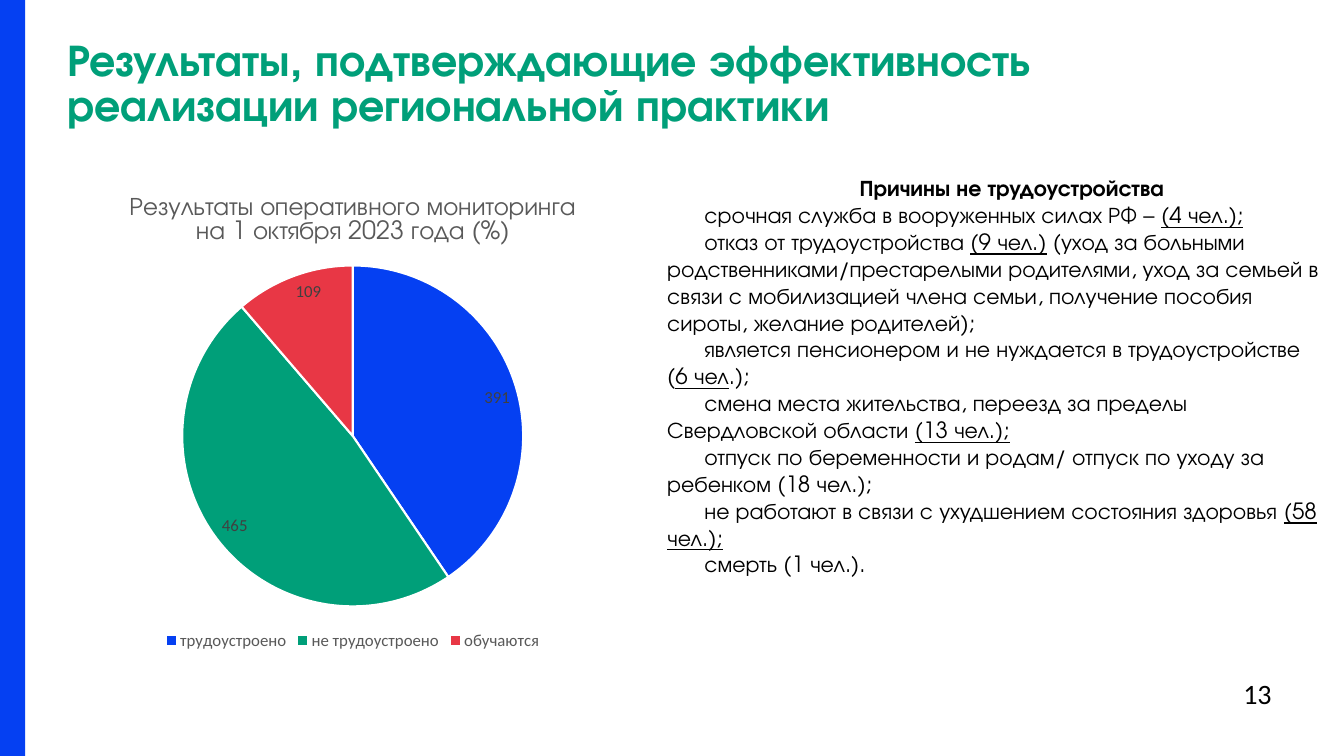
import pptx
import pptx.chart.data
import pptx.dml.color
import pptx.enum.chart
import pptx.enum.shapes
import pptx.enum.text
import pptx.oxml
import pptx.util

Pt = pptx.util.Pt

HEADING_FONT, PLAIN_FONT = "TeX Gyre Adventor", "Calibri"
TITLE = "Результаты, подтверждающие эффективность реализации региональной практики"
PAGE_NUMBER = "13"
CHART_TITLE = "Результаты оперативного мониторинга на 1 октября 2023 года (%)"
OUTCOMES = [
    ("трудоустроено", 391, "0540F2"),
    ("не трудоустроено", 465, "009F79"),
    ("обучаются", 109, "E83745"),
]
REASONS_HEADING = "Причины не трудоустройства"
# Every second span of a reason is underlined.
REASONS = [
    ("срочная служба в вооруженных силах РФ – ", "(4 чел.);"),
    ("отказ от трудоустройства ", "(9 чел.)",
     " (уход за больными родственниками/престарелыми родителями, уход за семьей "
     "в связи с мобилизацией члена семьи, получение пособия сироты, "
     "желание родителей);"),
    ("является пенсионером и не нуждается в трудоустройстве (", "6 чел", ".);"),
    ("смена места жительства, переезд за пределы Свердловской области ",
     "(13 чел.);"),
    ("отпуск по беременности и родам/ отпуск по уходу за ребенком (18 чел.);",),
    ("не работают в связи с ухудшением состояния здоровья ", "(58 чел.);"),
    ("смерть (1 чел.).",),
]
PIE_AREA = {"x": 0.2, "y": 0.19, "w": 0.6, "h": 0.71}


def paint(color_format, hex_color):
    color_format.rgb = pptx.dml.color.RGBColor.from_string(hex_color)


def style(font, size, name, color, bold=False):
    font.size, font.name, font.bold = Pt(size), name, bold
    paint(font.color, color)


def add_span(para, text, size, name, color, bold=False, underline=False):
    span = para.add_run()
    span.text = text
    style(span.font, size, name, color, bold)
    if underline:
        span.font.underline = True


def add_box(page, left, top, width, height, wrap=True, margin=None):
    frame = page.shapes.add_textbox(Pt(left), Pt(top), Pt(width), Pt(height)).text_frame
    frame.word_wrap = wrap
    if margin is not None:
        frame.margin_left = frame.margin_right = Pt(margin)
        frame.margin_top = frame.margin_bottom = Pt(margin)
    return frame


def add_side_bar(page):
    bar = page.shapes.add_shape(
        pptx.enum.shapes.MSO_SHAPE.RECTANGLE, 0, 0, Pt(18), Pt(540))
    bar.shadow.inherit = False
    bar.fill.solid()
    paint(bar.fill.fore_color, "0540F2")
    bar.line.fill.background()


def place_plot(chart):
    """Fix the inner plot area as fractions of the chart."""
    plot_area = chart.plots[0]._element.getparent()
    for old in plot_area.xpath("c:layout"):
        plot_area.remove(old)
    modes = "".join(f'<c:{axis}Mode val="edge"/>' for axis in "xy")
    sizes = "".join(f'<c:{key} val="{value}"/>' for key, value in PIE_AREA.items())
    plot_area.insert(0, pptx.oxml.parse_xml(
        '<c:layout xmlns:c="http://schemas.openxmlformats.org/drawingml/2006/chart">'
        f'<c:manualLayout><c:layoutTarget val="inner"/>{modes}{sizes}'
        "</c:manualLayout></c:layout>"))


def add_outcome_chart(page):
    names, values, colors = zip(*OUTCOMES)
    data = pptx.chart.data.CategoryChartData()
    data.categories = names
    data.add_series("Series 1", values)
    chart = page.shapes.add_chart(
        pptx.enum.chart.XL_CHART_TYPE.PIE,
        Pt(48), Pt(124.5), Pt(408), Pt(343), data).chart
    style(chart.font, 10, PLAIN_FONT, "000000")

    chart.has_title = True
    add_span(chart.chart_title.text_frame.paragraphs[0],
             CHART_TITLE, 18, HEADING_FONT, "595959")
    chart.chart_title.include_in_layout = False

    chart.has_legend = True
    chart.legend.position = pptx.enum.chart.XL_LEGEND_POSITION.BOTTOM
    chart.legend.include_in_layout = False
    style(chart.legend.font, 12, PLAIN_FONT, "595959")

    plot = chart.plots[0]
    plot.vary_by_categories = True
    for index, color in enumerate(colors):
        wedge = plot.series[0].points[index].format
        wedge.fill.solid()
        paint(wedge.fill.fore_color, color)
        wedge.line.width = Pt(1.5)
        paint(wedge.line.color, "FFFFFF")
    labels = plot.series[0].data_labels
    labels.show_value = True
    labels.position = pptx.enum.chart.XL_LABEL_POSITION.INSIDE_END
    style(labels.font, 12, PLAIN_FONT, "404040")
    place_plot(chart)


def add_reasons(page):
    frame = add_box(page, 469.5, 121, 480, 298)
    for number, spans in enumerate([(REASONS_HEADING,)] + REASONS):
        para = frame.add_paragraph() if number else frame.paragraphs[0]
        para._p.get_or_add_pPr().set("indent", str(Pt(26.6)))
        if number == 0:
            para.alignment = pptx.enum.text.PP_ALIGN.CENTER
        for index, text in enumerate(spans):
            add_span(para, text, 16, HEADING_FONT, "000000",
                     bold=number == 0, underline=index % 2 == 1)


def main():
    deck = pptx.Presentation()
    deck.slide_width, deck.slide_height = Pt(960), Pt(540)
    page = deck.slides.add_slide(deck.slide_layouts[6])

    number = add_box(page, 881, 480, 38, 32, wrap=False)
    add_span(number.paragraphs[0], PAGE_NUMBER, 20, PLAIN_FONT, "000000")

    title = add_box(page, 48, 29, 859, 35, margin=0).paragraphs[0]
    title.line_spacing = Pt(32)
    add_span(title, TITLE, 32, HEADING_FONT, "009F79", bold=True)

    add_side_bar(page)
    add_outcome_chart(page)
    add_reasons(page)
    deck.save("out.pptx")


if __name__ == "__main__":
    main()
